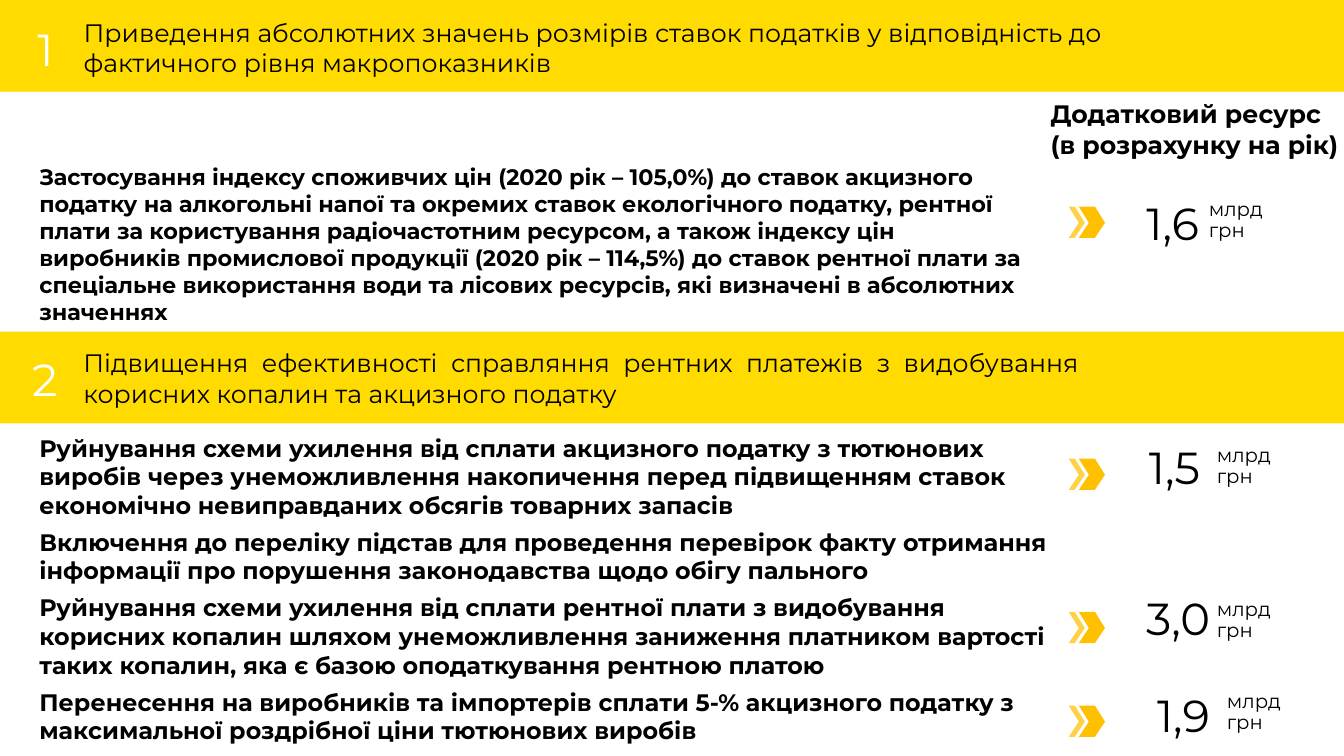
from lxml import etree
from pptx import Presentation
from pptx.dml.color import RGBColor
from pptx.enum.shapes import MSO_SHAPE
from pptx.enum.text import MSO_ANCHOR, MSO_AUTO_SIZE, PP_ALIGN
from pptx.oxml.ns import qn
from pptx.util import Inches, Pt

FONT = "Montserrat"
COLORS = {"band": "FFDB00", "arrow": "FFC000", "text": "000000", "number": "FFFFFF"}


def write(sp, box, lines, size, bold=False, color="text", align=PP_ALIGN.LEFT,
          inset=True, after=0, spacing=1.0):
    """Place a text shape at box (left, top, width, height) and fill it."""
    sp.left, sp.top, sp.width, sp.height = [Inches(v) for v in box]
    tf = sp.text_frame
    tf.word_wrap = True
    tf.auto_size = MSO_AUTO_SIZE.NONE
    tf.vertical_anchor = MSO_ANCHOR.TOP
    if not inset:
        tf.margin_left = tf.margin_right = tf.margin_top = tf.margin_bottom = 0
    for i, line in enumerate(lines):
        p = tf.add_paragraph() if i else tf.paragraphs[0]
        p.text = line
        p.alignment = align
        p.space_before = Pt(0)
        p.space_after = Pt(after)
        p.line_spacing = spacing
        p.font.name = FONT
        p.font.size = Pt(size)
        p.font.bold = bold
        p.font.color.rgb = RGBColor.from_string(COLORS[color])


def paint(sp, color):
    sp.shadow.inherit = False
    sp.fill.solid()
    sp.fill.fore_color.rgb = RGBColor.from_string(COLORS[color])
    sp.line.fill.background()


prs = Presentation()
prs.slide_width = Inches(13.33)
prs.slide_height = Inches(7.5)
s = prs.slides.add_slide(prs.slide_layouts[5])
title = s.shapes.title

# Section bands, behind the title
for top in (0, 3.29):
    band = s.shapes.add_shape(MSO_SHAPE.RECTANGLE, 0, Inches(top), prs.slide_width, Inches(0.91))
    paint(band, "band")
    title.element.addprevious(band.element)

# Section headings and numbers
write(title, (0.73, 0.12, 10.65, 0.71),
      ["Приведення абсолютних значень розмірів ставок податків у відповідність до "
       "фактичного рівня макропоказників"], 18)
write(s.shapes.add_textbox(0, 0, 0, 0), (0.73, 3.4, 10.07, 0.72),
      ["Підвищення ефективності справляння рентних платежів з видобування "
       "корисних копалин та акцизного податку"], 18, align=PP_ALIGN.JUSTIFY)
for number, left, top in (("1", -0.11, 0.17), ("2", -0.07, 3.44)):
    write(s.shapes.add_textbox(0, 0, 0, 0), (left, top, 0.74, 0.57), [number], 32,
          color="number", align=PP_ALIGN.RIGHT)

# Measures
write(s.shapes.add_textbox(0, 0, 0, 0), (10.42, 0.98, 3.51, 0.42),
      ["Додатковий ресурс\v(в розрахунку на рік)"], 18, bold=True, inset=False)
write(s.shapes.add_textbox(0, 0, 0, 0), (0.39, 1.62, 9.74, 1.41),
      ["Застосування індексу споживчих цін (2020 рік – 105,0%) до ставок акцизного "
       "податку на алкогольні напої та окремих ставок екологічного податку, рентної "
       "плати за користування радіочастотним ресурсом, а також індексу цін "
       "виробників промислової продукції (2020 рік – 114,5%) до ставок рентної плати "
       "за спеціальне використання води та лісових ресурсів, які визначені в "
       "абсолютних значеннях"], 16, bold=True, inset=False)
write(s.shapes.add_textbox(0, 0, 0, 0), (0.39, 4.3, 10.3, 3.62),
      ["Руйнування схеми ухилення від сплати акцизного податку з тютюнових "
       "виробів через унеможливлення накопичення перед підвищенням ставок "
       "економічно невиправданих обсягів товарних запасів",
       "Включення до переліку підстав для проведення перевірок факту отримання "
       "інформації про порушення законодавства щодо обігу пального",
       "Руйнування схеми ухилення від сплати рентної плати з видобування "
       "корисних копалин шляхом унеможливлення заниження платником вартості "
       "таких копалин, яка є базою оподаткування рентною платою",
       "Перенесення на виробників та імпортерів сплати 5-% акцизного податку з "
       "максимальної роздрібної ціни тютюнових виробів"],
      17, bold=True, inset=False, after=6)

# Extra revenue: amount, its left and top, unit left and top, arrow top
REVENUES = [
    ("1,6", 10.58, 1.89, 11.89, 1.93, 2.05),
    ("1,5", 10.59, 4.31, 11.97, 4.37, 4.55),
    ("3,0", 10.69, 5.81, 11.97, 5.9, 6.07),
    ("1,9", 10.69, 6.77, 12.07, 6.81, 7.0),
]
# Arrow halves: left edge, width of the flat top, opacity in percent
CHEVRONS = [(10.7, 0.16, 100), (10.6, 0.06, 72)]

for amount, left, top, unit_left, unit_top, arrow_top in REVENUES:
    write(s.shapes.add_textbox(0, 0, 0, 0), (left, top, 1.41, 0.65), [amount], 32,
          align=PP_ALIGN.RIGHT)
    write(s.shapes.add_textbox(0, 0, 0, 0), (unit_left, unit_top, 1.41, 0.57),
          ["млрд", "грн"], 14, spacing=0.9)
    arrow = s.shapes.add_group_shape()
    for x, flat, opacity in CHEVRONS:
        middle, bottom = arrow_top + 0.16, arrow_top + 0.31
        outline = [(x + 0.1, middle), (x, bottom), (x + flat, bottom),
                   (x + flat + 0.1, middle), (x + flat, arrow_top)]
        fb = arrow.shapes.build_freeform(Inches(x), Inches(arrow_top))
        fb.add_line_segments([(Inches(px), Inches(py)) for px, py in outline], close=True)
        chevron = fb.convert_to_shape()
        paint(chevron, "arrow")
        if opacity < 100:
            rgb = chevron.element.spPr.find(qn("a:solidFill")).find(qn("a:srgbClr"))
            etree.SubElement(rgb, qn("a:alpha")).set("val", str(opacity * 1000))

prs.save("out.pptx")
